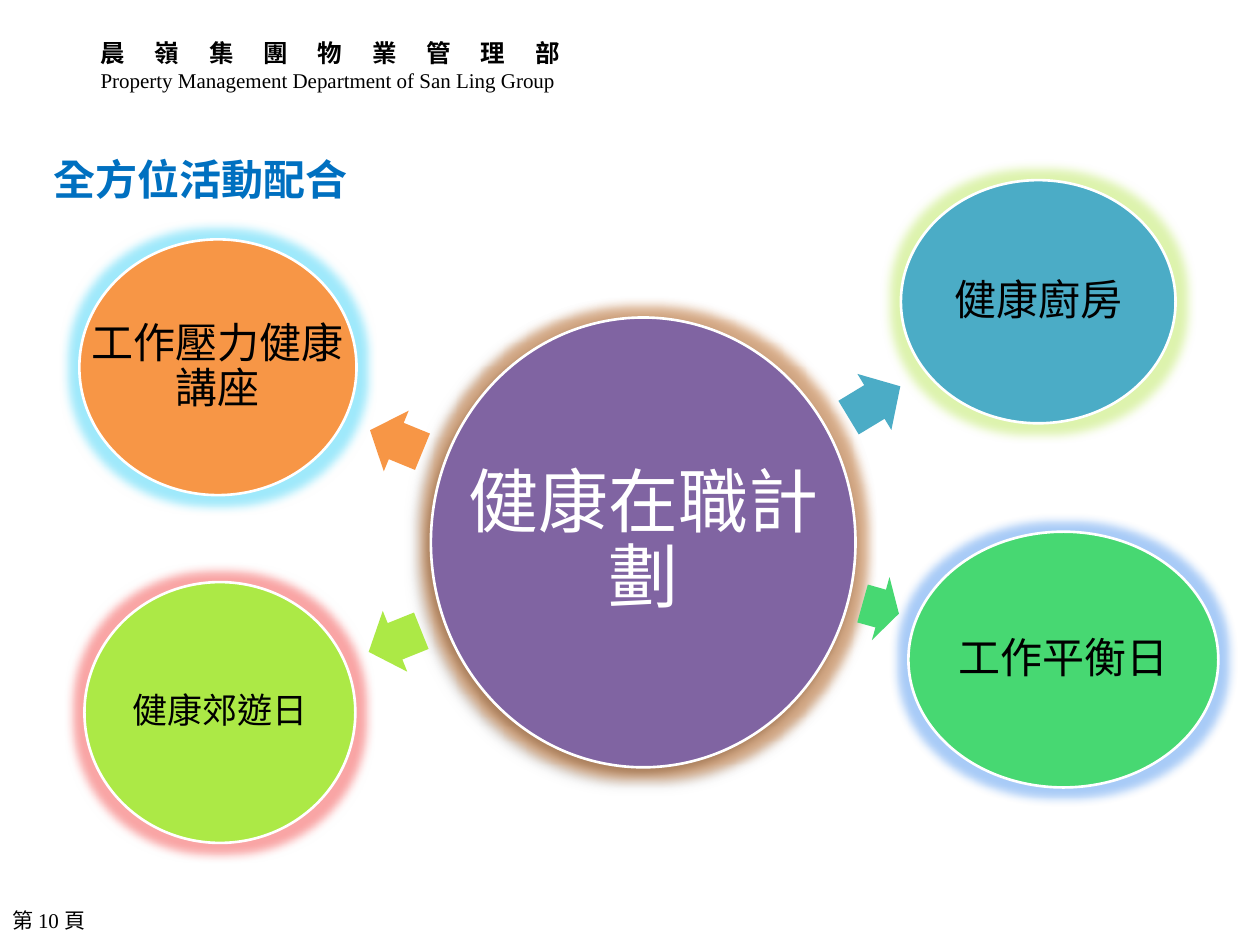
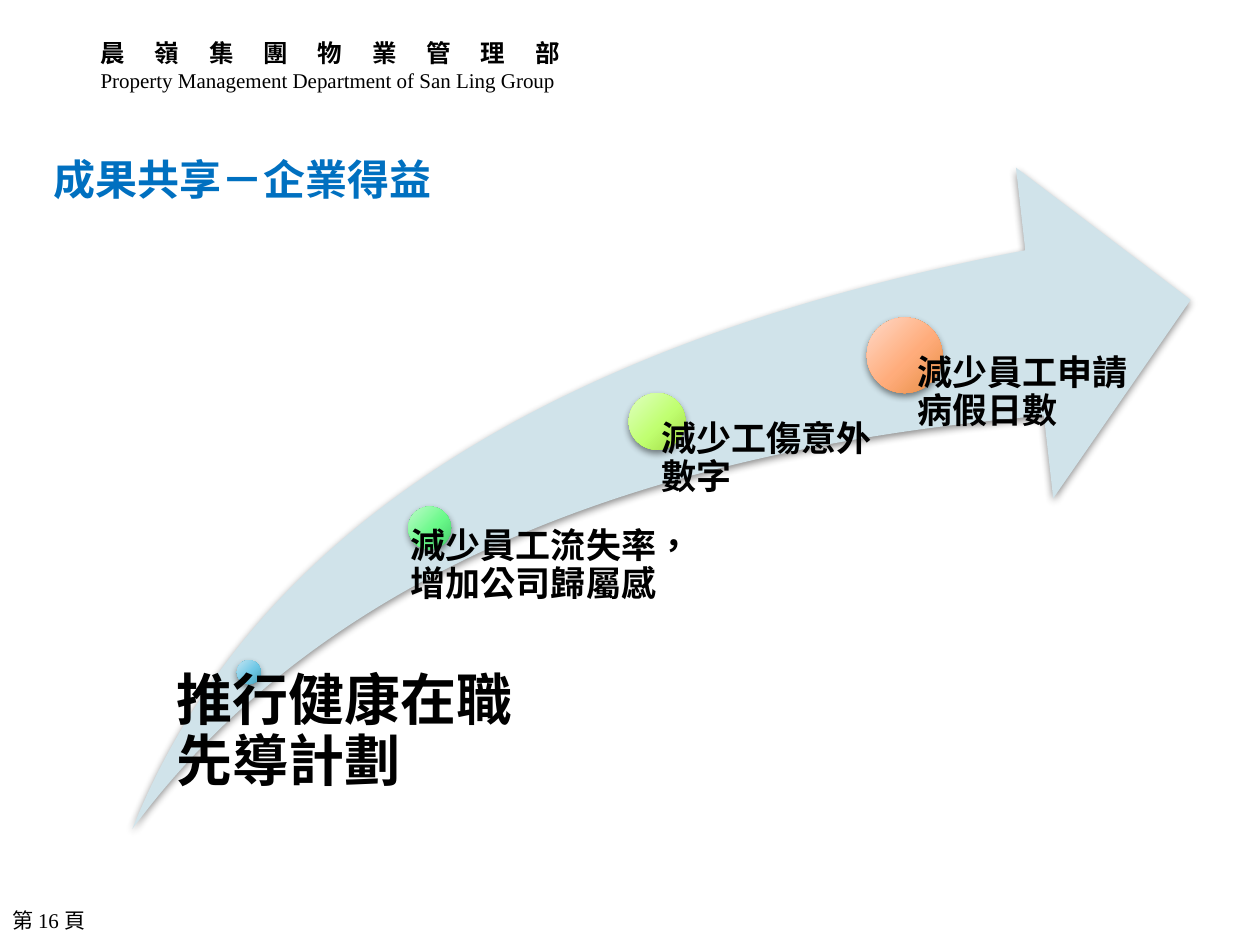
from dataclasses import dataclass

from lxml.etree import SubElement
from pptx import Presentation
from pptx.dml.color import RGBColor
from pptx.enum.shapes import MSO_SHAPE
from pptx.enum.text import MSO_ANCHOR, MSO_AUTO_SIZE, PP_ALIGN
from pptx.oxml import parse_xml
from pptx.oxml.ns import nsdecls, qn
from pptx.util import Inches, Pt

COLUMNS, ROWS = 100, 75


@dataclass(frozen=True)
class Theme:
    cjk: str = "Noto Sans CJK SC"
    latin: str = "Arial"
    serif: str = "Times New Roman"
    black: str = "000000"
    white: str = "FFFFFF"
    title: str = "0070C0"
    purple: str = "8064A2"
    teal: str = "4BACC6"
    green: str = "47D872"
    lime: str = "ACE946"
    orange: str = "F79646"
    swoosh: str = "D0E3EA"
    glow_hub: str = "C65C05"
    glow_lime: str = "AAE134"
    glow_blue: str = "267DEB"
    glow_red: str = "F01E1E"
    glow_cyan: str = "11C8F5"
    dot_blue: tuple = ("C2E4F2", "6FC8E6", "46A0B8")
    dot_green: tuple = ("BFFBCA", "69F989", "43CA6A")
    dot_lime: tuple = ("E0FFC2", "C0FF70", "A0D941")
    dot_orange: tuple = ("FFD9C8", "FFAC7B", "E68C41")
    small: int = 12
    department: int = 14
    label: int = 20
    heading: int = 24
    start: int = 32
    hub: int = 40
    outline: float = 1.5
    glow_radius: int = 11


THEME = Theme()
HUB_SHADOW = (40, 4, 3, 135)
SOFT_SHADOW = (45, 4, 2, 90)


class SlideBuilder:
    def __init__(self, theme):
        self.theme = theme
        self.deck = Presentation()
        self.deck.slide_width, self.deck.slide_height = Inches(10), Inches(7.5)
        self.page = None

    def across(self, columns):
        return round(self.deck.slide_width * columns / COLUMNS)

    def down(self, rows):
        return round(self.deck.slide_height * rows / ROWS)

    def place(self, area):
        left, top, width, height = area
        return self.across(left), self.down(top), self.across(width), self.down(height)

    def start_page(self, title, number):
        theme = self.theme
        self.page = self.deck.slides.add_slide(self.deck.slide_layouts[6])
        header = self.text((7, 2.5, 76.6, 4.2), "晨嶺集團物業管理部", theme.department,
                           font=theme.cjk, bold=True, spacing=17)
        self.span(header.text_frame.add_paragraph(),
                  "Property Management Department of San Ling Group",
                  theme.small, theme.serif)
        heading = self.text((3.3, 11.7, 32, 5), title, theme.heading, font=theme.cjk,
                            color=theme.title, bold=True)
        heading.text_frame.word_wrap = False
        heading.text_frame.auto_size = MSO_AUTO_SIZE.SHAPE_TO_FIT_TEXT
        self.text((0, 71, 23.3, 4), f"第 {number} 頁", theme.small, font=theme.serif,
                  anchor=MSO_ANCHOR.MIDDLE)

    def span(self, para, words, size, font, color=None, bold=False, spacing=0):
        span = para.add_run()
        span.text = words
        span.font.size, span.font.bold = Pt(size), bold
        span.font.color.rgb = RGBColor.from_string(color or self.theme.black)
        span.font.name = font
        properties = span.font._element
        properties.set("lang", "zh-TW")
        properties.set("spc", str(spacing * 100))
        SubElement(properties, qn("a:ea")).set("typeface", self.theme.cjk)

    def text(self, area, words, size, font=None, color=None, bold=False, spacing=0,
             anchor=MSO_ANCHOR.TOP, align=PP_ALIGN.LEFT, margins=(1, 0.5, 1, 0.5),
             line_spacing=1.0):
        box = self.page.shapes.add_textbox(*self.place(area))
        frame = box.text_frame
        frame.word_wrap, frame.vertical_anchor = True, anchor
        frame.margin_left, frame.margin_top, frame.margin_right, frame.margin_bottom = (
            self.place(margins))
        para = frame.paragraphs[0]
        para.alignment, para.line_spacing = align, line_spacing
        self.span(para, words, size, font or self.theme.latin, color, bold, spacing)
        return box

    def shape(self, kind, area, fill, outlined=False, turn=0, adjustments=(),
              glow=None, shadow=None):
        shape = self.page.shapes.add_shape(kind, *self.place(area))
        shape.rotation = turn
        for index, value in enumerate(adjustments):
            shape.adjustments[index] = value
        if isinstance(fill, tuple):
            self.radial_fill(shape, fill)
        else:
            shape.fill.solid()
            shape.fill.fore_color.rgb = RGBColor.from_string(fill)
        if outlined:
            shape.line.color.rgb = RGBColor.from_string(self.theme.white)
            shape.line.width = Pt(self.theme.outline)
        else:
            shape.line.fill.background()
        shape.shadow.inherit = False
        effects = shape._element.spPr.find(qn("a:effectLst"))
        if glow:
            halo = SubElement(effects, qn("a:glow"), rad=str(Pt(self.theme.glow_radius)))
            self.tint(halo, glow, 40)
        if shadow:
            alpha, blur, distance, angle = shadow
            shade = SubElement(effects, qn("a:outerShdw"), blurRad=str(Pt(blur)),
                               dist=str(Pt(distance)), dir=str(angle * 60000),
                               rotWithShape="0")
            self.tint(shade, self.theme.black, alpha)
        return shape

    def tint(self, parent, color, alpha):
        shade = SubElement(parent, qn("a:srgbClr"), val=color)
        SubElement(shade, qn("a:alpha"), val=str(alpha * 1000))

    def radial_fill(self, shape, colors):
        stops = "".join(
            f'<a:gs pos="{position}000"><a:srgbClr val="{color}"/></a:gs>'
            for position, color in zip((0, 55, 100), colors))
        gradient = parse_xml(
            f'<a:gradFill {nsdecls("a")} rotWithShape="1"><a:gsLst>{stops}</a:gsLst>'
            '<a:path path="circle"><a:fillToRect l="-40000" t="-90000" '
            'r="140000" b="190000"/></a:path></a:gradFill>')
        shape._element.spPr.find(qn("a:prstGeom")).addnext(gradient)

    def bubble(self, area, words, size, fill, glow, color=None, margin=0.3, shadow=None):
        self.shape(MSO_SHAPE.OVAL, area, fill, outlined=True, glow=glow, shadow=shadow)
        self.text(area, words, size, color=color, anchor=MSO_ANCHOR.MIDDLE,
                  align=PP_ALIGN.CENTER, margins=(margin,) * 4, line_spacing=0.9)

    def spoke(self, arrow, turn, area, words, size, fill, glow):
        self.shape(MSO_SHAPE.RIGHT_ARROW, arrow, fill, turn=turn, adjustments=(0.6, 0.5))
        self.bubble(area, words, size, fill, glow)

    def milestone(self, left, top, size, fill, text_left, text_width, words, type_size,
                  font, floor):
        self.shape(MSO_SHAPE.OVAL, (left, top, size, size), fill, shadow=SOFT_SHADOW)
        middle = top + size / 2
        self.text((text_left, middle, text_width, floor - middle), words, type_size,
                  font=font, bold=True, margins=(size * 0.53, 0, 0, 0), line_spacing=0.9)


def build_activities(builder):
    theme = builder.theme
    builder.start_page("全方位活動配合", 10)
    builder.bubble((34.2, 25.2, 33.7, 35.7), "健康在職計劃", theme.hub, theme.purple,
                   theme.glow_hub, color=theme.white, margin=0.6, shadow=HUB_SHADOW)
    spokes = (
        ((67, 29.3, 4.8, 5.2), 328.8, (71.5, 14.3, 21.8, 19.3), "健康廚房",
         theme.heading, theme.teal, theme.glow_lime),
        ((68.4, 45.7, 3, 5.2), 15.6, (72.1, 42.2, 24.6, 20.3), "工作平衡日",
         theme.heading, theme.green, theme.glow_blue),
        ((29.1, 48.3, 4.5, 5.2), 158.1, (6.7, 46.2, 21.5, 20.7), "健康郊遊日",
         theme.label, theme.lime, theme.glow_red),
        ((29.2, 32.4, 4.5, 5.2), 202.3, (6.3, 19, 22, 20.3), "工作壓力健康講座",
         theme.heading, theme.orange, theme.glow_cyan),
    )
    for spoke in spokes:
        builder.spoke(*spoke)


def build_benefits(builder):
    theme = builder.theme
    builder.start_page("成果共享－企業得益", 16)
    left, top, width, height = swoosh = (10.5, 13.3, 84, 52.5)
    builder.shape(MSO_SHAPE.SWOOSH_ARROW, swoosh, theme.swoosh,
                  adjustments=(0.25, 0.25), shadow=SOFT_SHADOW)
    milestones = (
        (18.8, 52.4, 1.9, theme.dot_blue, 13, 27.8, "推行健康在職先導計劃",
         theme.start, theme.latin),
        (32.4, 40.2, 3.4, theme.dot_green, 30.8, 24.2, "減少員工流失率，增加公司歸屬感",
         theme.label, theme.cjk),
        (49.9, 31.2, 4.5, theme.dot_lime, 50.1, 21.5, "減少工傷意外數字",
         theme.label, theme.cjk),
        (68.8, 25.2, 6, theme.dot_orange, 69.6, 22.1, "減少員工申請病假日數",
         theme.label, theme.cjk),
    )
    for milestone in milestones:
        builder.milestone(*milestone, floor=top + height)


def main():
    builder = SlideBuilder(THEME)
    build_activities(builder)
    build_benefits(builder)
    builder.deck.save("out.pptx")


if __name__ == "__main__":
    main()
